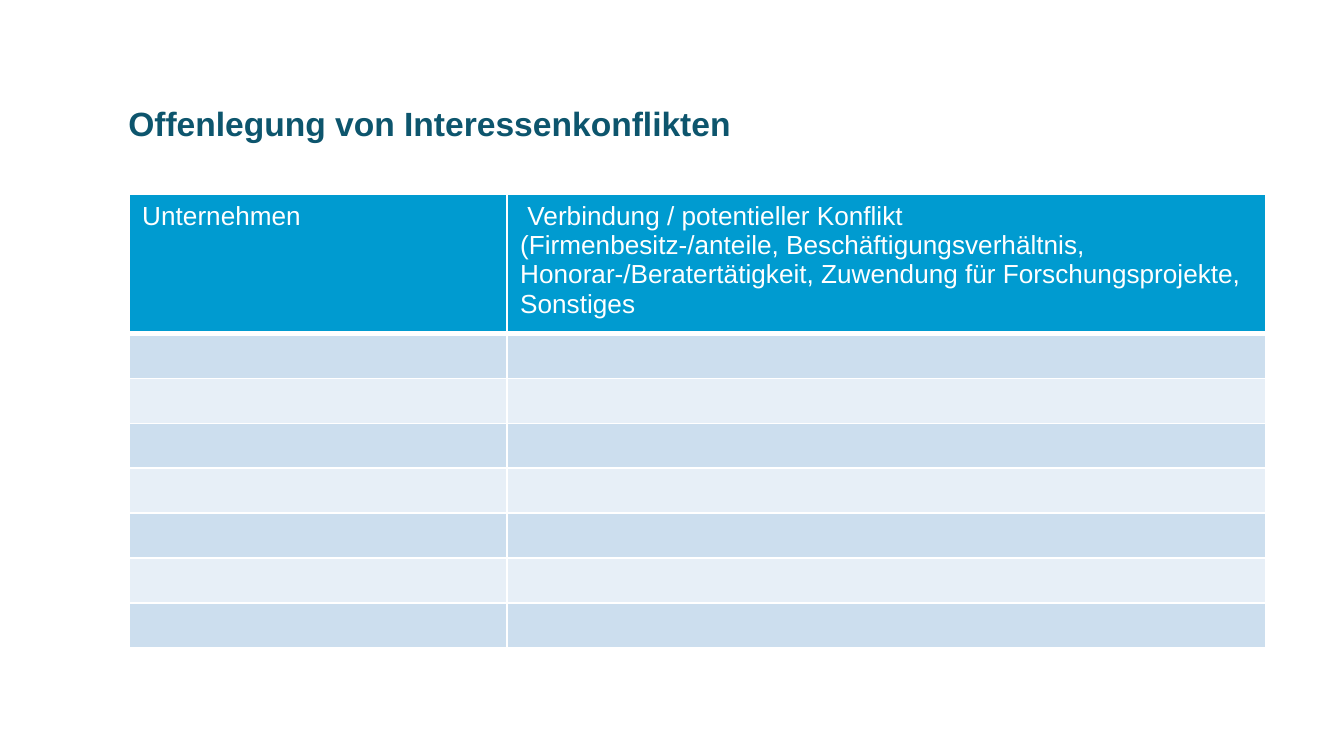
from lxml.etree import SubElement
from pptx import Presentation
from pptx.dml.color import RGBColor
from pptx.enum.text import MSO_ANCHOR, MSO_AUTO_SIZE, PP_ALIGN
from pptx.oxml.ns import qn
from pptx.util import Pt

EMU_PER_PX = 9525
FONT = "Arial"
WHITE = "FFFFFF"
TITLE_COLOR = "0D556D"
HEADER_FILL = "009BD0"
BAND_FILLS = ["CCDEEE", "E7EFF7"]
BODY_ROWS = 7
TABLE_TEXT_SIZE = 14
HEADERS = [
    ["Unternehmen"],
    [
        " Verbindung / potentieller Konflikt",
        "(Firmenbesitz-/anteile, Beschäftigungsverhältnis, "
        "Honorar-/Beratertätigkeit, Zuwendung für Forschungsprojekte, Sonstiges",
    ],
]


def px(length):
    return length * EMU_PER_PX


def color(value):
    return RGBColor.from_string(value)


def add_run(paragraph, text, size, text_color, bold=False):
    run = paragraph.add_run()
    run.text = text
    run.font.name = FONT
    run.font.size = Pt(size)
    run.font.bold = bold
    run.font.color.rgb = color(text_color)


def set_borders(cell, bottom_width):
    properties = cell._tc.get_or_add_tcPr()
    widths = {"lnL": 1, "lnR": 1, "lnT": 1, "lnB": bottom_width}
    for side, width in widths.items():
        line = SubElement(properties, qn(f"a:{side}"), w=str(Pt(width)))
        fill = SubElement(line, qn("a:solidFill"))
        SubElement(fill, qn("a:srgbClr"), val=WHITE)


def set_fill(cell, fill_color):
    cell.fill.solid()
    cell.fill.fore_color.rgb = color(fill_color)


def place_title(slide, left, top, width, height):
    title = slide.shapes.title
    title.left, title.top = px(left), px(top)
    title.width, title.height = px(width), px(height)
    frame = title.text_frame
    frame.word_wrap = True
    frame.auto_size = MSO_AUTO_SIZE.SHAPE_TO_FIT_TEXT
    frame.vertical_anchor = MSO_ANCHOR.TOP
    paragraph = frame.paragraphs[0]
    paragraph.alignment = PP_ALIGN.LEFT
    add_run(paragraph, "Offenlegung von Interessenkonflikten", 18, TITLE_COLOR, True)


def fill_header_cell(cell, lines):
    set_borders(cell, 3)
    set_fill(cell, HEADER_FILL)
    frame = cell.text_frame
    for index, text in enumerate(lines):
        paragraph = frame.add_paragraph() if index else frame.paragraphs[0]
        add_run(paragraph, text, TABLE_TEXT_SIZE, WHITE)


def fill_empty_cell(cell, fill_color):
    set_borders(cell, 1)
    set_fill(cell, fill_color)
    paragraph = cell.text_frame.paragraphs[0]
    SubElement(paragraph._p, qn("a:endParaRPr"), sz=str(TABLE_TEXT_SIZE * 100))


def add_conflict_table(slide, left, top, width, height):
    header_height = 81
    company_width = 270
    row_height = (height - header_height) // BODY_ROWS
    shape = slide.shapes.add_table(
        BODY_ROWS + 1, len(HEADERS), px(left), px(top), px(width), px(height)
    )
    table = shape.table
    for column, column_width in zip(table.columns, [company_width, width - company_width]):
        column.width = px(column_width)
    for row_index, row in enumerate(table.rows):
        row.height = px(row_height if row_index else header_height)
        for cell, lines in zip(row.cells, HEADERS):
            if row_index:
                fill_empty_cell(cell, BAND_FILLS[(row_index - 1) % 2])
            else:
                fill_header_cell(cell, lines)


def main():
    presentation = Presentation()
    presentation.slide_width = px(960)
    presentation.slide_height = px(540)
    slide = presentation.slides.add_slide(presentation.slide_layouts[5])
    add_conflict_table(slide, 92, 139, 812, 305)
    place_title(slide, 82, 69, 480, 38)
    presentation.save("out.pptx")


if __name__ == "__main__":
    main()
